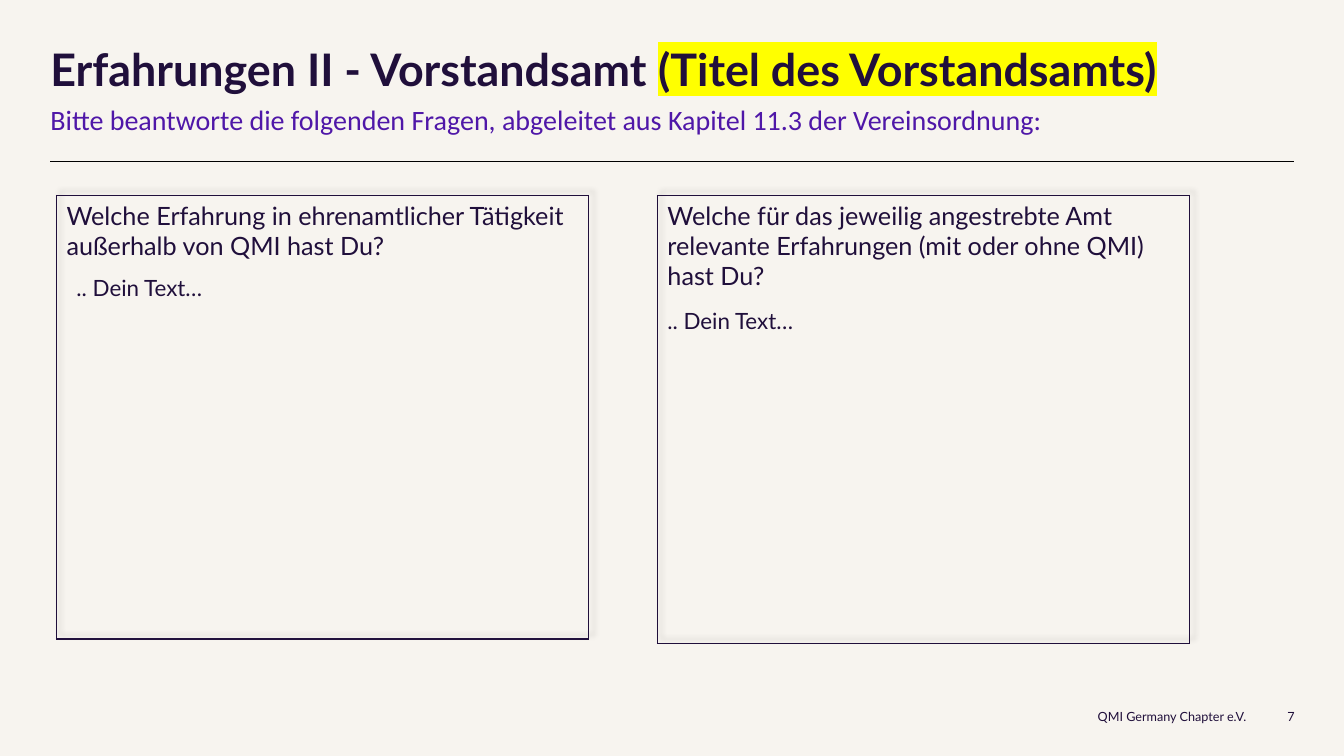
from dataclasses import dataclass

from lxml import etree
from pptx import Presentation
from pptx.dml.color import RGBColor
from pptx.enum.shapes import MSO_CONNECTOR
from pptx.enum.text import MSO_ANCHOR, MSO_AUTO_SIZE, PP_ALIGN
from pptx.oxml import parse_xml
from pptx.oxml.ns import qn
from pptx.util import Inches, Pt

LEFT, RIGHT = PP_ALIGN.LEFT, PP_ALIGN.RIGHT
TOP, MIDDLE = MSO_ANCHOR.TOP, MSO_ANCHOR.MIDDLE
NS = 'xmlns:a="http://schemas.openxmlformats.org/drawingml/2006/main"'


@dataclass(frozen=True)
class Theme:
    paper: str = "F7F4EF"
    ink: str = "200F3B"
    accent: str = "4F17A8"
    rule: str = "000000"
    mark: str = "FFFF00"
    font: str = "Lato"
    alt: str = "Calibri"
    title: int = 32
    sub: int = 20
    ask: int = 18
    body: int = 16
    foot: int = 9


T = Theme()


def write(frame, text, size=T.body, color=T.ink, font=T.font, bold=False,
          align=LEFT, anchor=TOP, inset=None, mark=None):
    """Append a run to the frame's first paragraph and format both."""
    frame.word_wrap = True
    frame.vertical_anchor = anchor
    if inset is not None:
        frame.margin_left = frame.margin_right = Inches(inset)
        frame.margin_top = frame.margin_bottom = Inches(inset)
    para = frame.paragraphs[0]
    para.alignment = align
    run = para.add_run()
    run.text = text
    run.font.size = Pt(size)
    run.font.name = font
    run.font.bold = bold
    run.font.color.rgb = RGBColor.from_string(color)
    if mark:
        fill = run._r.rPr.find(qn("a:solidFill"))
        fill.addnext(parse_xml(
            f'<a:highlight {NS}><a:srgbClr val="{mark}"/></a:highlight>'))
    return para


def edge(cell, sides):
    """Draw the named sides of a cell and clear the others."""
    props = cell._tc.get_or_add_tcPr()
    for side in "LRTB":
        paint = (f'<a:solidFill><a:srgbClr val="{T.ink}"/></a:solidFill>'
                 if side in sides else "<a:noFill/>")
        props.append(parse_xml(f'<a:ln{side} {NS} w="12700">{paint}</a:ln{side}>'))
    cell.fill.background()


prs = Presentation()
prs.slide_width, prs.slide_height = Inches(13.33), Inches(7.5)
slide = prs.slides.add_slide(prs.slide_layouts[5])
slide.background.fill.solid()
slide.background.fill.fore_color.rgb = RGBColor.from_string(T.paper)
shapes = slide.shapes

# Title
title = shapes.title
title.left, title.top = Inches(0.5), Inches(0.47)
title.width, title.height = Inches(12.33), Inches(0.48)
frame = title.text_frame
frame.auto_size = MSO_AUTO_SIZE.NONE
write(frame, "Erfahrungen II - Vorstandsamt ", size=T.title, bold=True, inset=0)
para = write(frame, "(Titel des Vorstandsamts)", size=T.title, bold=True,
             mark=T.mark)
para.line_spacing = 0.9

# Rule under the heading
rule = shapes.add_connector(MSO_CONNECTOR.STRAIGHT, Inches(0.5), Inches(1.6),
                            Inches(12.83), Inches(1.6))
rule.line.color.rgb = RGBColor.from_string(T.rule)
rule.line.width = Pt(0.5)
etree.SubElement(rule._element.spPr, qn("a:effectLst"))

# Question panels
panels = [
    (0.56, (0.83, 3.57),
     "Welche Erfahrung in ehrenamtlicher Tätigkeit außerhalb von QMI hast Du?"),
    (6.52, (1.51, 2.93),
     "Welche für das jeweilig angestrebte Amt relevante Erfahrungen "
     "(mit oder ohne QMI) hast Du?"),
]
for x, rows, ask in panels:
    table = shapes.add_table(2, 1, Inches(x), Inches(1.94), Inches(5.28),
                             Inches(sum(rows))).table
    table.first_row = table.horz_banding = False
    for row, height in zip(table.rows, rows):
        row.height = Inches(height)
    write(table.cell(0, 0).text_frame, ask, size=T.ask)
    edge(table.cell(0, 0), "LRT")
    edge(table.cell(1, 0), "LRB")
    table._tbl.tblPr.insert(0, parse_xml(
        f'<a:effectLst {NS}><a:outerShdw blurRad="50800" dist="50800" '
        'dir="18900000"><a:srgbClr val="000000"><a:alpha val="20000"/>'
        '</a:srgbClr></a:outerShdw></a:effectLst>'))

# Subtitle, answers and footer
answer = ".. Dein Text…"
foot = dict(size=T.foot, align=RIGHT, anchor=MIDDLE, inset=0)
labels = [
    (0.5, 1.02, 12.33, 0.34,
     "Bitte beantworte die folgenden Fragen, abgeleitet aus Kapitel 11.3 "
     "der Vereinsordnung:",
     dict(size=T.sub, color=T.accent, font=T.alt, inset=0)),
    (0.66, 2.67, 4.69, 0.67, answer, {}),
    (6.52, 3, 4.69, 0.67, answer, {}),
    (9.38, 6.71, 2.98, 0.79, "QMI Germany Chapter e.V.", foot),
    (12.36, 6.71, 0.48, 0.79, "7", foot),
]
for x, y, w, h, text, style in labels:
    box = shapes.add_textbox(Inches(x), Inches(y), Inches(w), Inches(h))
    write(box.text_frame, text, **style)

prs.save("out.pptx")
